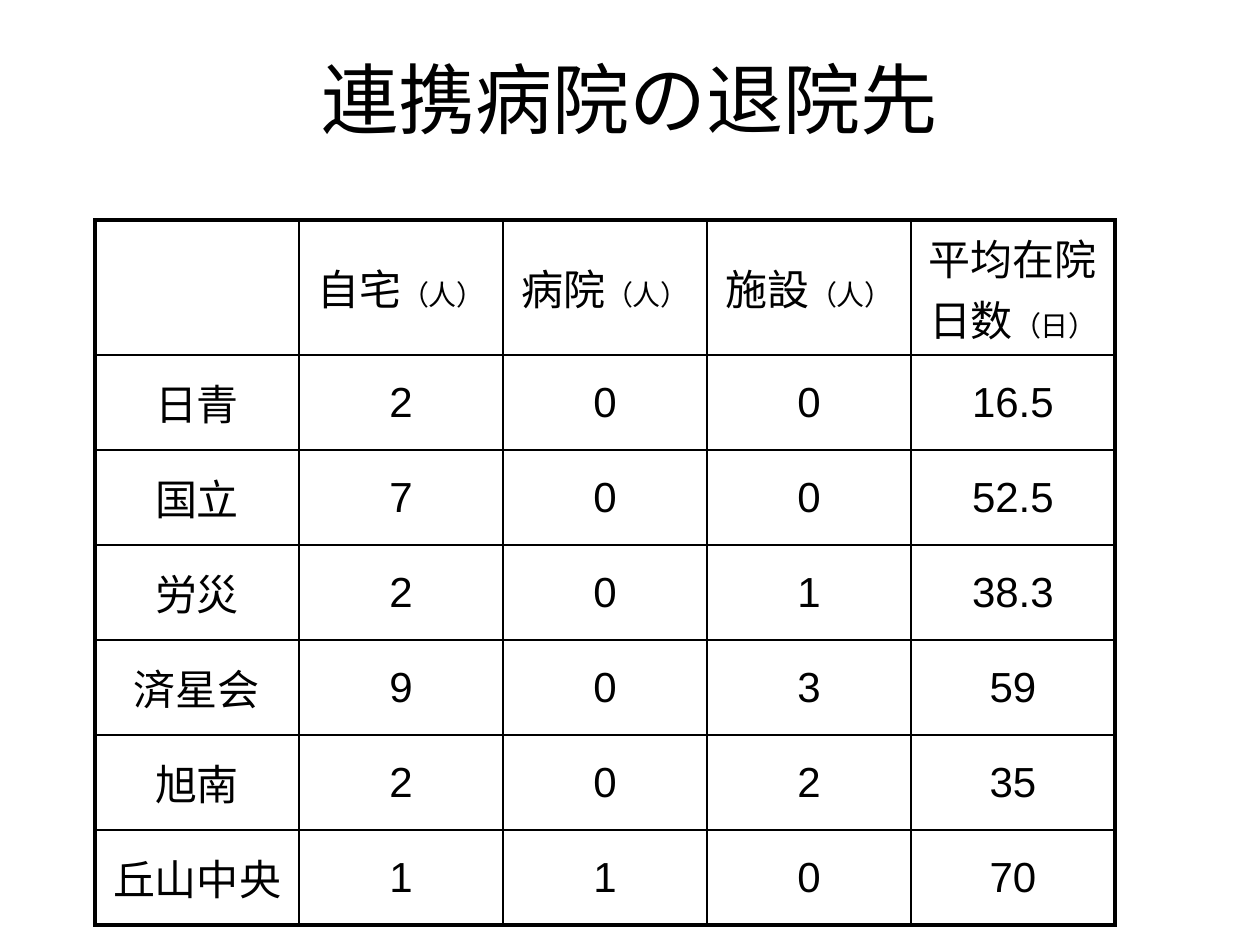
from pptx import Presentation
from pptx.dml.color import RGBColor
from pptx.enum.text import MSO_ANCHOR as Anchor, PP_ALIGN as Align
from pptx.oxml import parse_xml
from pptx.oxml.ns import nsdecls
from pptx.util import Emu, Pt

# Content
TITLE = "連携病院の退院先"
HEAD = [("", ""), ("自宅", "（人）"), ("病院", "（人）"),
        ("施設", "（人）"), ("平均在院日数", "（日）")]
ROWS = [
    ("日青", "2", "0", "0", "16.5"),
    ("国立", "7", "0", "0", "52.5"),
    ("労災", "2", "0", "1", "38.3"),
    ("済星会", "9", "0", "3", "59"),
    ("旭南", "2", "0", "2", "35"),
    ("丘山中央", "1", "1", "0", "70"),
]
GRID = [HEAD] + [[(text, "") for text in row] for row in ROWS]

BLACK = RGBColor(0, 0, 0)
THIN, THICK = Pt(1), Pt(2.25)
COL_W, HEAD_H, ROW_H = 204, 135, 95


def px(n):
    return Emu(n * 914400 // 126)


def style(par, face, size):
    par.alignment = Align.CENTER
    par.font.name = face
    par.font.size = Pt(size)
    par.font.color.rgb = BLACK


def border(cell, side, width):
    cell._tc.get_or_add_tcPr().append(parse_xml(
        f'<a:{side} {nsdecls("a")} w="{width}"><a:solidFill>'
        f'<a:srgbClr val="{BLACK}"/></a:solidFill></a:{side}>'))


prs = Presentation()
prs.slide_width, prs.slide_height = px(1260), px(945)
slide = prs.slides.add_slide(prs.slide_layouts[6])

# Title, raised a little by its bottom inset
box = slide.shapes.add_textbox(px(63), px(38), px(1134), px(157))
frame = box.text_frame
frame.word_wrap = True
frame.vertical_anchor = Anchor.MIDDLE
frame.margin_bottom = px(43)
frame.text = TITLE
style(frame.paragraphs[0], "Calibri", 44)

# Table
rows, cols = len(GRID), len(HEAD)
table = slide.shapes.add_table(
    rows, cols, px(95), px(220),
    px(cols * COL_W), px(HEAD_H + (rows - 1) * ROW_H)).table
table.first_row = table.horz_banding = False
for col in table.columns:
    col.width = px(COL_W)
for r, line in enumerate(GRID):
    table.rows[r].height = px(ROW_H if r else HEAD_H)
    for c, (text, unit) in enumerate(line):
        cell = table.cell(r, c)
        cell.vertical_anchor = Anchor.MIDDLE
        par = cell.text_frame.paragraphs[0]
        style(par, "Arial", 24)
        par.space_before = Pt(4.8)
        if text:
            par.add_run().text = text
        if unit:
            run = par.add_run()
            run.text = unit
            run.font.size = Pt(16)
        # Thick lines on the outer edge only; borders precede the fill
        edges = {"lnL": c == 0, "lnR": c == cols - 1,
                 "lnT": r == 0, "lnB": r == rows - 1}
        for side, outer in edges.items():
            border(cell, side, THICK if outer else THIN)
        cell.fill.background()

prs.save("out.pptx")
